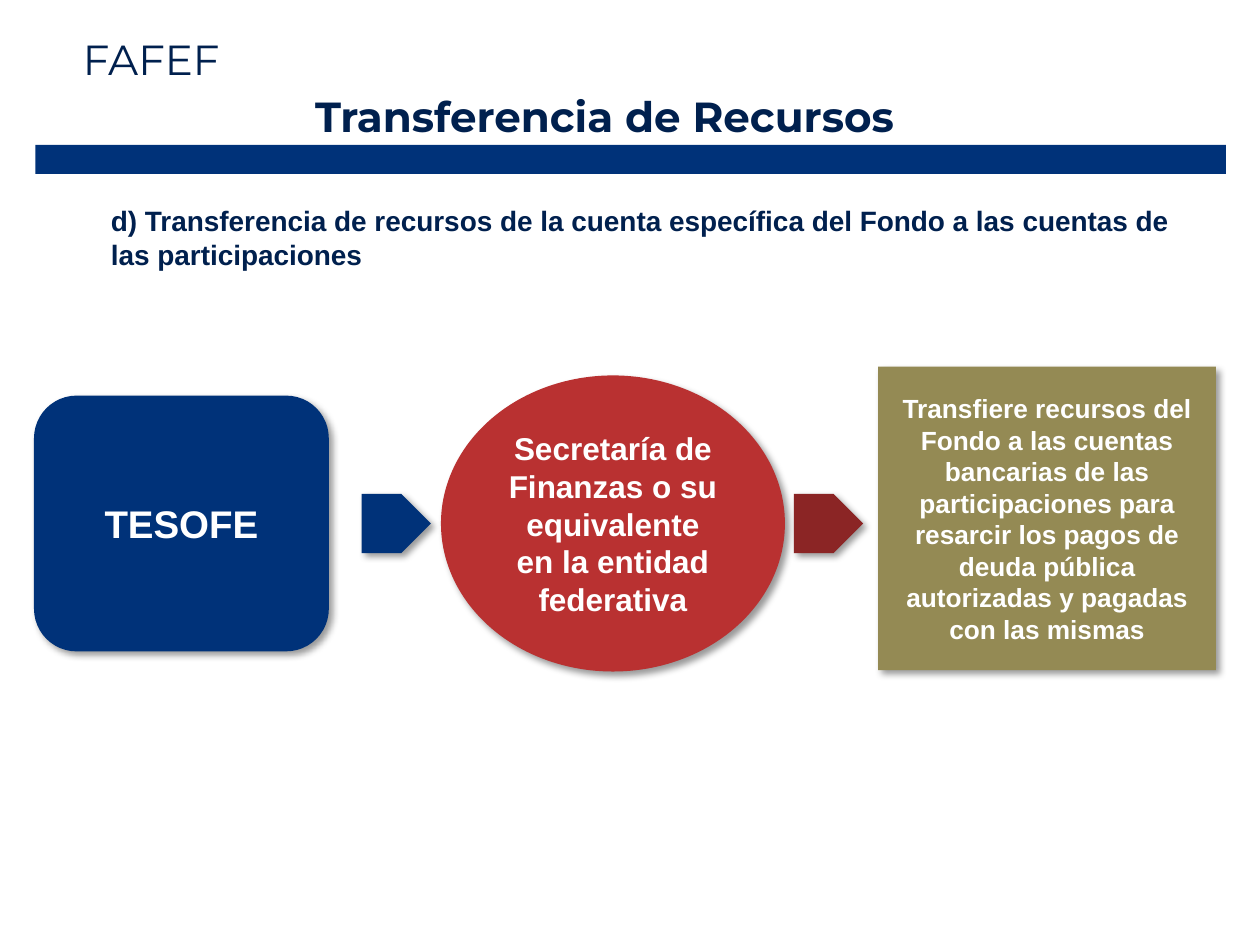
from lxml import etree
from pptx import Presentation
from pptx.dml.color import RGBColor
from pptx.enum.shapes import MSO_SHAPE
from pptx.enum.text import MSO_ANCHOR, MSO_AUTO_SIZE, PP_ALIGN
from pptx.oxml.ns import qn
from pptx.util import Inches, Pt

NAVY = RGBColor(0x00, 0x32, 0x79)
INK = RGBColor(0x00, 0x20, 0x4E)
RED = RGBColor(0xB9, 0x31, 0x31)
WINE = RGBColor(0x8B, 0x25, 0x25)
OLIVE = RGBColor(0x94, 0x8A, 0x54)
WHITE = RGBColor(0xFF, 0xFF, 0xFF)

RECT, ROUND = MSO_SHAPE.RECTANGLE, MSO_SHAPE.ROUNDED_RECTANGLE
OVAL, ARROW = MSO_SHAPE.OVAL, MSO_SHAPE.PENTAGON
LEFT, CENTER = PP_ALIGN.LEFT, PP_ALIGN.CENTER
TOP, MIDDLE = MSO_ANCHOR.TOP, MSO_ANCHOR.MIDDLE
FIXED = MSO_AUTO_SIZE.NONE

COLS, ROWS = 100, 75
MID = 41.55  # row through the centre of the flow

HEAD = {"name": "Montserrat", "size": Pt(24), "bold": False}
BODY = {"name": "Arial", "size": Pt(16), "bold": True}


class Deck:
    """Holds the grid, the text styles and the current slide."""

    def __init__(self):
        self.prs = Presentation()
        self.prs.slide_width, self.prs.slide_height = Inches(10), Inches(7.5)
        self.slide = self.prs.slides.add_slide(self.prs.slide_layouts[5])

    def place(self, col, row, wide, high):
        """Turn grid columns and rows into slide lengths."""
        x, y = self.prs.slide_width / COLS, self.prs.slide_height / ROWS
        return [round(n) for n in (col * x, row * y, wide * x, high * y)]

    def letter(self, shape, text, style, color, align=LEFT, anchor=TOP, wrap=True):
        """Put styled text into a shape and return its frame."""
        frame = shape.text_frame
        frame.text = text
        layout = {"word_wrap": wrap, "auto_size": FIXED, "vertical_anchor": anchor}
        for key, value in layout.items():
            setattr(frame, key, value)
        para = frame.paragraphs[0]
        para.alignment = align
        for key, value in style.items():
            setattr(para.font, key, value)
        para.font.color.rgb = color
        return frame

    def title(self, text, *box):
        shape = self.slide.shapes.title
        spot = zip(("left", "top", "width", "height"), self.place(*box))
        for key, value in spot:
            setattr(shape, key, value)
        self.letter(shape, text, HEAD | {"bold": True}, INK, wrap=False)

    def label(self, text, style, *box, indent=0, wrap=True):
        shape = self.slide.shapes.add_textbox(*self.place(*box))
        frame = self.letter(shape, text, style, INK, wrap=wrap)
        frame.margin_left = Inches(0.1 + indent)

    def block(self, kind, fill, *box):
        shape = self.slide.shapes.add_shape(kind, *self.place(*box))
        shape.shadow.inherit = False
        shape.fill.solid()
        shape.fill.fore_color.rgb = fill
        shape.line.fill.background()
        return shape

    def step(self, kind, fill, col, wide, high, mid=MID, text="", size=18):
        """Add a shadowed flow shape centred on row mid."""
        shape = self.block(kind, fill, col, mid - high / 2, wide, high)
        self.shade(shape)
        if text:
            style = BODY | {"size": Pt(size)}
            self.letter(shape, text, style, WHITE, CENTER, MIDDLE)

    def shade(self, shape):
        effects = shape.element.spPr.find(qn("a:effectLst"))
        outer = etree.SubElement(
            effects, qn("a:outerShdw"), blurRad=str(Pt(4)), dist=str(Pt(3)),
            dir=str(45 * 60000), algn="tl", rotWithShape="0")
        color = etree.SubElement(outer, qn("a:srgbClr"), val="000000")
        etree.SubElement(color, qn("a:alpha"), val="40000")


def main():
    deck = Deck()
    deck.label("FAFEF", HEAD, 5.6, 2.2, 13.5, 5, wrap=False)
    deck.title("Transferencia de Recursos", 24, 6.7, 51.5, 5)
    deck.block(RECT, NAVY, 2.8, 11.5, 94.5, 2.3)
    deck.label(
        "d) Transferencia de recursos de la cuenta específica del Fondo "
        "a las cuentas de las participaciones",
        BODY, 2.8, 15.7, 93.7, 6.4, indent=0.5)

    deck.step(ROUND, NAVY, 2.7, 23.4, 20.3, text="TESOFE", size=22)
    deck.step(OVAL, RED, 35, 27.3, 23.5,
              text="Secretaría de Finanzas o su equivalente "
                   "en la entidad federativa")
    deck.step(RECT, OLIVE, 69.7, 26.8, 24.1, mid=41.15, size=15,
              text="Transfiere recursos del Fondo a las cuentas bancarias "
                   "de las participaciones para resarcir los pagos de deuda "
                   "pública autorizadas y pagadas con las mismas")
    for col, fill in ((28.7, NAVY), (63, WINE)):
        deck.step(ARROW, fill, col, 5.5, 4.7)

    deck.prs.save("out.pptx")


if __name__ == "__main__":
    main()
